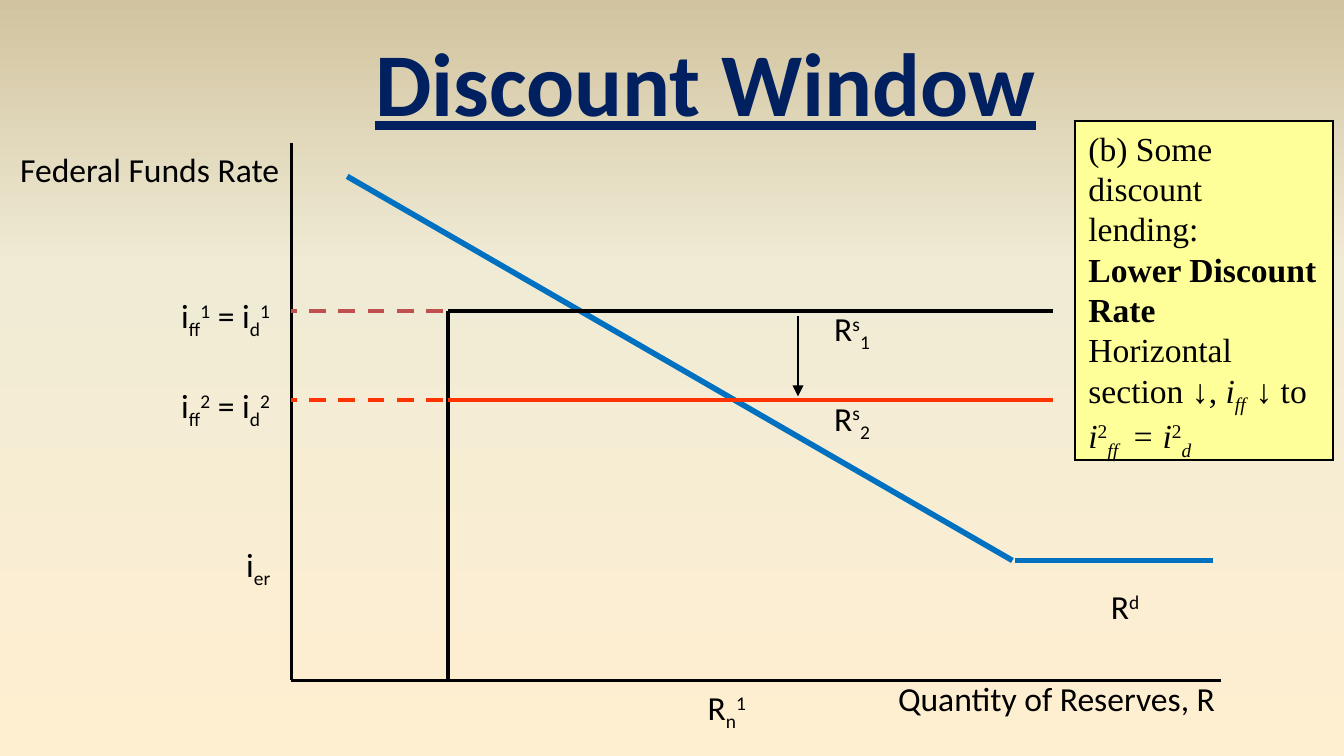
from collections import namedtuple
from lxml.etree import SubElement
from pptx import Presentation
from pptx.dml.color import RGBColor
from pptx.enum.dml import MSO_LINE as Dash
from pptx.enum.shapes import MSO_CONNECTOR as Connector, MSO_SHAPE as Shape
from pptx.enum.text import MSO_ANCHOR as Anchor, MSO_AUTO_SIZE as AutoSize, PP_ALIGN as Align
from pptx.oxml.ns import qn
from pptx.util import Inches, Pt

Box = namedtuple("Box", "left top width height")
WIDTH = 10
HEIGHT = WIDTH * 9 / 16
CELL = 1 / 12
COLUMNS, ROWS = 83, 48
BLACK, BLUE, RED, ROSE, NAVY = "000000", "0070C0", "FF3300", "C0504D", "002060"
BASELINES = {"_": "-25000", "^": "30000"}
LABEL_HEIGHT = 0.4


def color(value):
    """Turn a hex string into a colour."""
    return RGBColor.from_string(value)


def place(shape, box):
    """Move and size a shape to a box in inches."""
    shape.left, shape.top, shape.width, shape.height = map(Inches, box)


def paint_background(page, stops):
    """Fill the page with a gradient that rises from the bottom."""
    page.background.fill.gradient()
    gradient = page.element.find(".//" + qn("a:gradFill"))
    stop_list = gradient.find(qn("a:gsLst"))
    for stop in list(stop_list):
        stop_list.remove(stop)
    for position, value in stops:
        stop = SubElement(stop_list, qn("a:gs"), pos=str(position * 1000))
        SubElement(stop, qn("a:srgbClr"), val=value)
    gradient.find(qn("a:lin")).set("ang", "16200000")


def write(para, spans, font="Calibri", size=18, value=BLACK, align=Align.LEFT):
    """Write spans of text and style marks: _ low, ^ high, b bold, i italic, a Arial."""
    para.alignment = align
    para.font.name, para.font.size = font, Pt(size)
    para.font.color.rgb = color(value)
    for text, marks in spans:
        span = para.add_run()
        span.text = text
        if "b" in marks:
            span.font.bold = True
        if "i" in marks:
            span.font.italic = True
        if "a" in marks:
            span.font.name = "Arial"
        for mark in BASELINES.keys() & set(marks):
            span.font._element.set("baseline", BASELINES[mark])


def add_label(page, box, spans, wrap=False, align=Align.LEFT):
    """Add a text label in a box."""
    label = page.shapes.add_textbox(*map(Inches, box))
    label.text_frame.word_wrap = wrap
    label.text_frame.auto_size = AutoSize.SHAPE_TO_FIT_TEXT
    write(label.text_frame.paragraphs[0], spans, align=align)


def add_line(page, start, end, value=BLACK, weight=2.25, dash=None, arrow=False):
    """Draw a straight line between two points in inches."""
    line = page.shapes.add_connector(Connector.STRAIGHT, *map(Inches, start + end))
    line.line.color.rgb = color(value)
    line.line.width = Pt(weight)
    if dash:
        line.line.dash_style = dash
    if arrow:
        SubElement(line.line._get_or_add_ln(), qn("a:tailEnd"), type="triangle")
    SubElement(line.element.spPr, qn("a:effectLst"))


def add_title(page, box):
    """Place and format the page title."""
    title = page.shapes.title
    place(title, box)
    frame = title.text_frame
    frame.word_wrap, frame.auto_size = False, AutoSize.NONE
    frame.vertical_anchor = Anchor.TOP
    para = frame.paragraphs[0]
    write(para, [("Discount Window", "")], size=48, value=NAVY, align=Align.CENTER)
    para.font.bold = para.font.underline = True


def add_market(page, box):
    """Draw the reserves market on a grid inside the box."""
    def at(column, row):
        return (box.left + box.width * column / COLUMNS,
                box.top + box.height * row / ROWS)

    def label(column, row, width, spans, **options):
        add_label(page, Box(*at(column, row), width, LABEL_HEIGHT), spans, **options)

    def line(start, end, *style, **options):
        add_line(page, at(*start), at(*end), *style, **options)

    high, low, floor, supply, supply_end, kink = 15, 23, 37.3, 14, 68, 64.4
    line((0, 0), (0, ROWS), BLACK, 1.5)
    line((0, ROWS), (COLUMNS, ROWS), BLACK, 1.5)
    line((24, high), (0, high), ROSE, dash=Dash.DASH)
    line((5, 3), (kink, floor), BLUE, 3)
    line((kink + 0.2, floor), (82.3, floor), BLUE, 3)
    line((supply, ROWS), (supply, high))
    for number, (row, value) in enumerate([(high, BLACK), (low, RED)], 1):
        line((supply, row), (supply_end, row), value)
        label(-11, row - 2, 0.92, [
            ("i", ""), ("ff", "_"), (str(number), "^"),
            (" = i", ""), ("d", "_"), (str(number), "^")])
        label(47.3, row - 0.85, 0.56, [("R", ""), ("s", "^"), (str(number), "_")])
    line((24, low), (0, low), RED, dash=Dash.DASH)
    line((45.25, high + 0.45), (45.25, low - 0.35), BLACK, 0.75, arrow=True)
    label(-26, 0, 2.23, [("Federal Funds Rate", "")], wrap=True, align=Align.CENTER)
    label(-5.2, 35.2, 0.53, [("i", ""), ("er", "_")], wrap=True)
    label(36, ROWS, 0.57, [("R", ""), ("n", "_"), ("1", "^")])
    label(72, 39, 0.47, [("R", ""), ("d", "^")])
    label(53, 47.2, 2.58, [("Quantity of Reserves, R", "")], wrap=True)


def add_note(page, box):
    """Add the yellow note that explains the shift."""
    note = page.shapes.add_shape(Shape.RECTANGLE, *map(Inches, box))
    note.shadow.inherit = False
    note.fill.solid()
    note.fill.fore_color.rgb = color("FFFF99")
    note.line.color.rgb = color(BLACK)
    note.line.width = Pt(1)
    SubElement(note.line._get_or_add_ln(), qn("a:miter"), lim="800000")
    frame = note.text_frame
    frame.word_wrap, frame.vertical_anchor = True, Anchor.TOP
    lines = [
        [("(b) Some discount lending:", "")],
        [("Lower Discount Rate", "b")],
        [("Horizontal section ", ""), ("↓", "a"), (", ", ""), ("i", "i"),
         ("ff  ", "i_"), ("↓", "a"), (" to ", ""), ("i", "i"), ("2", "^"),
         ("ff ", "i_"), (" = i", "i"), ("2", "^"), ("d", "i_")],
    ]
    for index, spans in enumerate(lines):
        para = frame.add_paragraph() if index else frame.paragraphs[0]
        write(para, spans, font="Times New Roman")


def main():
    """Build the deck and save it."""
    deck = Presentation()
    deck.slide_width, deck.slide_height = Inches(WIDTH), Inches(HEIGHT)
    page = deck.slides.add_slide(deck.slide_layouts[5])
    paint_background(page, [(0, "FFEFD1"), (65, "F0EBD5"), (100, "D1C39F")])
    add_market(page, Box(26 * CELL, 12.75 * CELL, COLUMNS * CELL, ROWS * CELL))
    add_note(page, Box(8, 0.9, 1.92, 2.52))
    add_title(page, Box(2.67, 0.15, 5.16, 0.91))
    deck.save("out.pptx")


if __name__ == "__main__":
    main()
